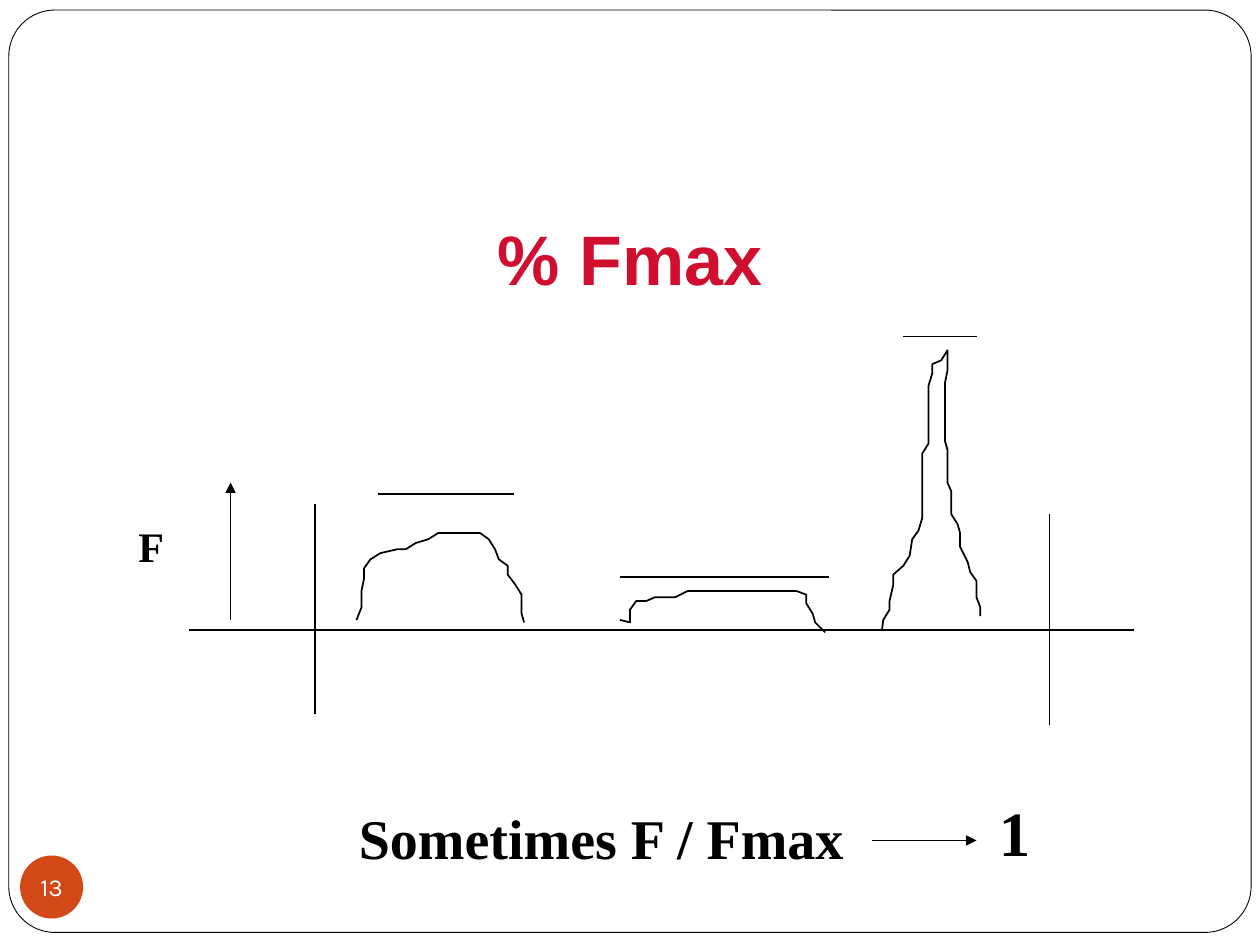
from lxml import etree
from pptx import Presentation
from pptx.dml.color import RGBColor
from pptx.enum.shapes import MSO_CONNECTOR, MSO_SHAPE as Shape
from pptx.enum.text import MSO_ANCHOR as Anchor, MSO_AUTO_SIZE as Fit, PP_ALIGN as Align
from pptx.oxml.ns import qn
from pptx.util import Inches, Pt

BLACK, WHITE, RED, ORANGE = "000000", "FFFFFF", "CF0E30", "D34817"
SERIF = "Times New Roman"

# Curve points in inches from the top left of the chart area
LOW = [
    (1.83, 2.25), (1.87, 2.15), (1.87, 2.02), (1.89, 1.92), (1.89, 1.84),
    (1.94, 1.77), (2.02, 1.72), (2.15, 1.69), (2.22, 1.69), (2.3, 1.64),
    (2.4, 1.61), (2.48, 1.56), (2.81, 1.56), (2.88, 1.61), (2.93, 1.69),
    (2.96, 1.77), (3.03, 1.82), (3.03, 1.89), (3.09, 1.97), (3.14, 2.05),
    (3.14, 2.2), (3.16, 2.27),
]
FLAT = [
    (3.92, 2.25), (4, 2.27), (4, 2.17), (4.05, 2.1), (4.13, 2.1),
    (4.2, 2.07), (4.36, 2.07), (4.46, 2.02), (5.32, 2.02), (5.4, 2.05),
    (5.4, 2.12), (5.45, 2.2), (5.47, 2.27), (5.55, 2.35),
]
PEAK = [
    (6, 2.33), (6.01, 2.25), (6.06, 2.17), (6.06, 2.1), (6.09, 1.97),
    (6.09, 1.89), (6.17, 1.82), (6.22, 1.74), (6.24, 1.61), (6.29, 1.54),
    (6.32, 1.44), (6.32, 0.93), (6.37, 0.85), (6.37, 0.39), (6.4, 0.29),
    (6.4, 0.22), (6.47, 0.19), (6.52, 0.11), (6.52, 0.27), (6.5, 0.37),
    (6.5, 0.83), (6.52, 0.9), (6.52, 1.16), (6.55, 1.23), (6.55, 1.41),
    (6.6, 1.49), (6.62, 1.56), (6.62, 1.67), (6.68, 1.79), (6.7, 1.87),
    (6.75, 1.94), (6.75, 2.07), (6.78, 2.15), (6.78, 2.22),
]


def color(code):
    return RGBColor.from_string(code)


def add_line(slide, x1, y1, x2, y2, arrow=False):
    line = slide.shapes.add_connector(
        MSO_CONNECTOR.STRAIGHT, *map(Inches, (x1, y1, x2, y2)))
    line.line.color.rgb = color(BLACK)
    line.line.width = Pt(1)
    if arrow:
        etree.SubElement(line.line._get_or_add_ln(), qn("a:tailEnd"), type="triangle")
    etree.SubElement(line._element.spPr, qn("a:effectLst"))


def add_curve(slide, left, top, points):
    moved = [(Inches(left + x), Inches(top + y)) for x, y in points]
    pen = slide.shapes.build_freeform(*moved[0])
    pen.add_line_segments(moved[1:], close=False)
    curve = pen.convert_to_shape()
    curve.shadow.inherit = False
    curve.fill.background()
    curve.line.color.rgb = color(BLACK)
    curve.line.width = Pt(1)


def set_text(shape, text, face, size, ink, bold=False, align=Align.LEFT):
    para = shape.text_frame.paragraphs[0]
    para.text = text
    para.alignment = align
    font = para.font
    font.name, font.size, font.bold = face, Pt(size), bold
    font.color.rgb = color(ink)
    return para


def add_label(slide, left, top, width, height, text, size):
    box = slide.shapes.add_textbox(*map(Inches, (left, top, width, height)))
    box.text_frame.word_wrap = True
    box.text_frame.auto_size = Fit.SHAPE_TO_FIT_TEXT
    para = set_text(box, text, SERIF, size, BLACK, bold=True)
    # Half a line of space before, as a percentage
    props = para._p.get_or_add_pPr()
    gap = etree.Element(qn("a:spcBef"))
    etree.SubElement(gap, qn("a:spcPct"), val="50000")
    props.insert(0, gap)


def add_frame(slide, left, top, width, height):
    frame = slide.shapes.add_shape(
        Shape.ROUNDED_RECTANGLE, *map(Inches, (left, top, width, height)))
    frame.adjustments[0] = 0.05
    frame.shadow.inherit = False
    frame.fill.solid()
    frame.fill.fore_color.rgb = color(WHITE)
    frame.line.color.rgb = color(BLACK)
    frame.line.width = Pt(0.5)


def add_title(slide, left, top, width, height):
    box = slide.shapes.add_textbox(*map(Inches, (left, top, width, height)))
    box.text_frame.word_wrap = True
    box.text_frame.vertical_anchor = Anchor.MIDDLE
    set_text(box, "% Fmax", "Arial", 40, RED, bold=True, align=Align.CENTER)


def add_chart_area(slide, left, top):
    """Axes, force curves and the level line above each curve."""
    lines = [
        (0.5, 2.33, 8, 2.33),
        (1.5, 1.33, 1.5, 3),
        (7.33, 1.41, 7.33, 3.08),
        (2, 1.25, 3.08, 1.25),
        (3.92, 1.91, 5.58, 1.91),
        (6.17, 0, 6.75, 0),
    ]
    for x1, y1, x2, y2 in lines:
        add_line(slide, left + x1, top + y1, left + x2, top + y2)
    for points in (LOW, FLAT, PEAK):
        add_curve(slide, left, top, points)
    x = left + 0.83
    add_line(slide, x, top + 2.25, x, top + 1.16, arrow=True)
    add_label(slide, left, top + 1.41, 0.76, 0.5, "F", 24)


def add_note(slide, left, top):
    add_label(slide, left, top + 0.08, 6.34, 0.63, "Sometimes F / Fmax", 32)
    y = top + 0.42
    add_line(slide, left + 4.17, y, left + 5, y, arrow=True)
    add_label(slide, left + 5.08, top, 0.84, 0.7, "1", 36)


def add_number(slide, left, top, size):
    disc = slide.shapes.add_shape(
        Shape.OVAL, *map(Inches, (left, top, size, size)))
    disc.shadow.inherit = False
    disc.fill.solid()
    disc.fill.fore_color.rgb = color(ORANGE)
    disc.line.fill.background()
    frame = disc.text_frame
    frame.margin_left = frame.margin_right = frame.margin_top = frame.margin_bottom = 0
    frame.word_wrap = False
    frame.vertical_anchor = Anchor.MIDDLE
    set_text(disc, "13", "Karla", 14, WHITE, align=Align.CENTER)


def main():
    deck = Presentation()
    deck.slide_width, deck.slide_height = Inches(10), Inches(7.5)
    slide = deck.slides.add_slide(deck.slide_layouts[6])
    add_frame(slide, 0.07, 0.08, 9.86, 7.32)
    add_title(slide, 0.75, 1.42, 8.5, 1.25)
    add_chart_area(slide, 1, 2.67)
    add_note(slide, 2.75, 6.25)
    add_number(slide, 0.16, 6.79, 0.5)
    deck.save("out.pptx")


if __name__ == "__main__":
    main()
